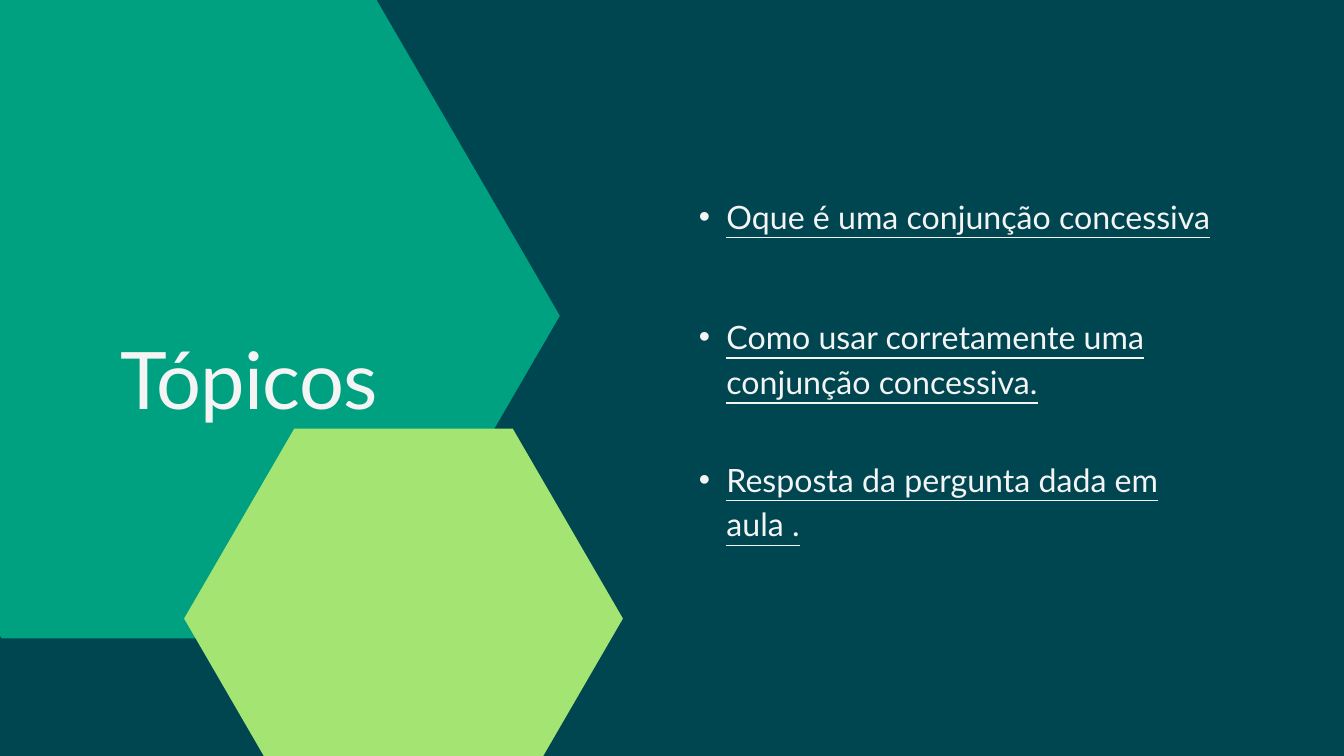
"""Build the topics slide: two hexagons, a title and an underlined list."""
from lxml import etree
from pptx import Presentation, util as u
from pptx.dml.color import RGBColor
from pptx.enum import shapes, text
from pptx.oxml import ns

HUES = {"back": "004651", "teal": "00A181", "lime": "A4E473", "text": "F4F4F4"}
TOPICS = [
    ("Oque é uma conjunção concessiva", 0),
    ("Como usar corretamente uma conjunção concessiva.", 80.8),
    ("Resposta da pergunta dada em aula .", 56.4),
]


def place(box, left, top, wide, high):
    box.left, box.top = u.Inches(left), u.Inches(top)
    box.width, box.height = u.Inches(wide), u.Inches(high)
    frame = box.text_frame
    frame.margin_left = frame.margin_right = 0
    frame.margin_top = frame.margin_bottom = 0
    frame.word_wrap = True
    frame.auto_size = text.MSO_AUTO_SIZE.NONE
    frame.vertical_anchor = text.MSO_ANCHOR.TOP
    return frame


def write(para, words, size, line, gap=0):
    para.alignment = text.PP_ALIGN.LEFT
    para.line_spacing = u.Pt(line)
    para.space_before = u.Pt(gap)
    para.space_after = u.Pt(0)
    run = para.add_run()
    run.text = words
    run.font.name = "Lato"
    run.font.size = u.Pt(size)
    run.font.color.rgb = RGBColor.from_string(HUES["text"])
    return run


deck = Presentation()
deck.slide_width, deck.slide_height = u.Inches(20), u.Inches(11.25)
slide = deck.slides.add_slide(deck.slide_layouts[1])
slide.background.fill.solid()
slide.background.fill.fore_color.rgb = RGBColor.from_string(HUES["back"])
title, body = slide.shapes.title, slide.placeholders[1]

for hue, left, top, wide, high in [
    ("teal", -2.76, -0.1, 11.09, 9.6),
    ("lime", 2.74, 6.38, 6.53, 5.65),
]:
    hexagon = slide.shapes.add_shape(
        shapes.MSO_SHAPE.HEXAGON,
        u.Inches(left), u.Inches(top), u.Inches(wide), u.Inches(high))
    hexagon.adjustments[0] = 0.29
    hexagon.shadow.inherit = False
    hexagon.fill.solid()
    hexagon.fill.fore_color.rgb = RGBColor.from_string(HUES[hue])
    hexagon.line.fill.background()
    title.element.addprevious(hexagon.element)

frame = place(title, 1.79, 4.92, 4.88, 1.41)
run = write(frame.paragraphs[0], "Tópicos", 85, 102)
run.font._element.set("spc", "-80")

frame = place(body, 10, 2.84, 8.2, 5.22)
for num, (words, gap) in enumerate(TOPICS):
    para = frame.add_paragraph() if num else frame.paragraphs[0]
    props = para._p.get_or_add_pPr()
    props.set("marL", str(u.Inches(0.81)))
    props.set("indent", str(u.Inches(-0.41)))
    etree.SubElement(props, ns.qn("a:buChar")).set("char", "•")
    run = write(para, words, 34.4, 48.1, gap)
    run.font.underline = True

deck.save("out.pptx")
